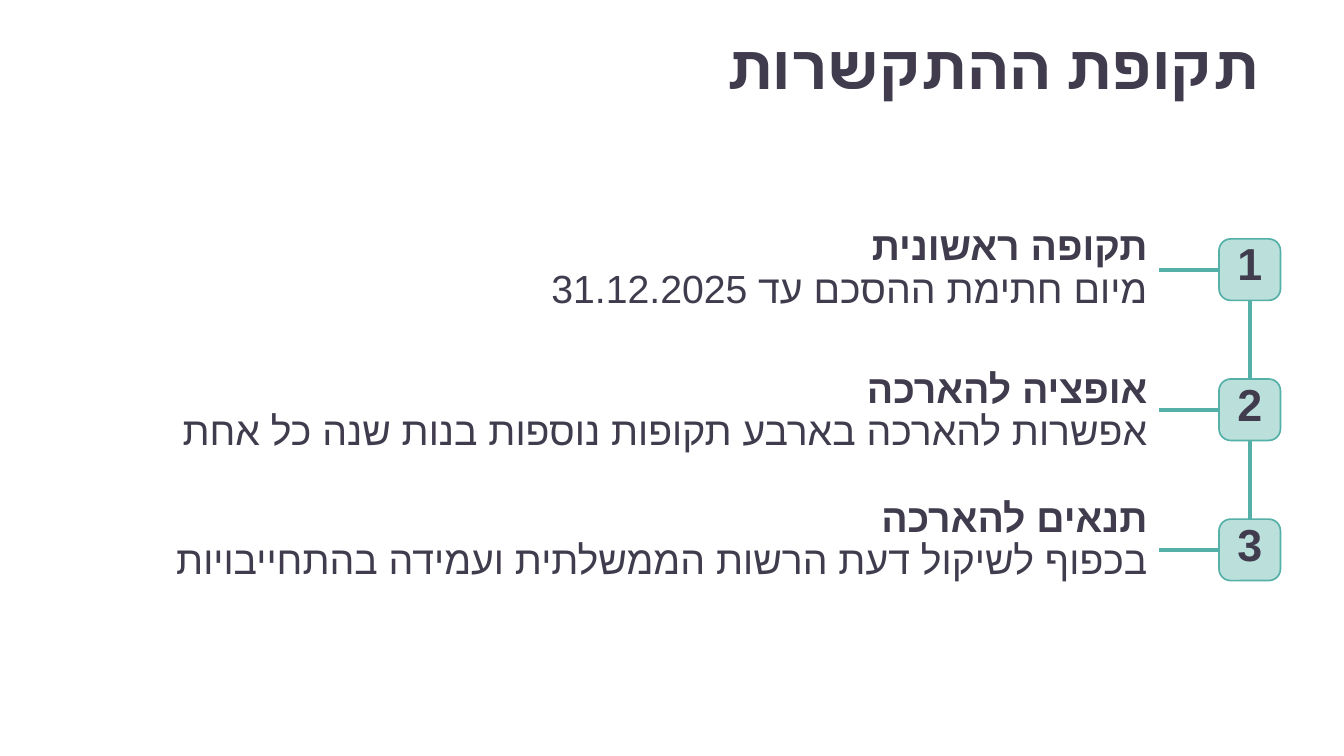
import pptx
import pptx.util
import pptx.dml.color
import pptx.enum.shapes
import pptx.enum.text
import pptx.oxml.ns
import lxml.etree

Inches = pptx.util.Inches
INK = "403C4E"
TEAL = "55B0A7"

BADGE_LEFT, BADGE_TOP = 12.09, 2.37
BADGE_SIZE, BADGE_PITCH = 0.61, 1.39
BRANCH_END = 11.5
TEXT_RIGHT, TEXT_WIDTH = 11.38, 10
DETAIL_OFFSET = 0.41

# Heading, its top, detail
STAGES = [
    ("תקופה ראשונית", 2.25, "מיום חתימת ההסכם עד 31.12.2025"),
    ("אופציה להארכה", 3.66, "אפשרות להארכה בארבע תקופות נוספות בנות שנה כל אחת"),
    ("תנאים להארכה", 4.94, "בכפוף לשיקול דעת הרשות הממשלתית ועמידה בהתחייבויות"),
]


def color(value):
    return pptx.dml.color.RGBColor.from_string(value)


def add_child(parent, tag, **attributes):
    return lxml.etree.SubElement(parent, pptx.oxml.ns.qn(tag), attributes)


def write_text(frame, text, size, spacing, font, bold, align):
    """Fill a frame with one right-to-left paragraph."""
    frame.text = text
    frame.word_wrap = True
    para = frame.paragraphs[0]
    para.alignment = align
    para.line_spacing = pptx.util.Pt(spacing)
    para._p.get_or_add_pPr().set("rtl", "1")
    span = para.runs[0]
    span.font.size = pptx.util.Pt(size)
    span.font.bold = bold
    span.font.color.rgb = color(INK)
    span.font.name = font
    # Hebrew letters take the complex-script typeface
    add_child(span.font._element, "a:cs", typeface=font)


def clear_margins(frame):
    frame.margin_left = frame.margin_right = 0
    frame.margin_top = frame.margin_bottom = 0


def add_title(page, text):
    title = page.shapes.title
    title.left, title.top = Inches(6.18), Inches(-0.1)
    title.width, title.height = Inches(6.41), Inches(1.45)
    title.text_frame.vertical_anchor = pptx.enum.text.MSO_ANCHOR.MIDDLE
    write_text(title.text_frame, text, 44, 55, "Calibri", True,
               pptx.enum.text.PP_ALIGN.RIGHT)


def add_label(page, text, top, spacing, bold):
    """Add a text box that ends at the common right edge."""
    box = page.shapes.add_textbox(Inches(TEXT_RIGHT - TEXT_WIDTH), Inches(top),
                                  Inches(TEXT_WIDTH), Inches(0.42))
    clear_margins(box.text_frame)
    write_text(box.text_frame, text, 28, spacing, "Arial", bold,
               pptx.enum.text.PP_ALIGN.RIGHT)


def add_badge(page, number):
    top = BADGE_TOP + (number - 1) * BADGE_PITCH
    badge = page.shapes.add_shape(
        pptx.enum.shapes.MSO_SHAPE.ROUNDED_RECTANGLE,
        Inches(BADGE_LEFT), Inches(top), Inches(BADGE_SIZE), Inches(BADGE_SIZE))
    badge.adjustments[0] = 0.19
    badge.shadow.inherit = False
    badge.fill.solid()
    badge.fill.fore_color.rgb = color(TEAL)
    fill_color = badge._element.spPr.find(".//" + pptx.oxml.ns.qn("a:srgbClr"))
    add_child(fill_color, "a:alpha", val="40000")
    badge.line.color.rgb = color(TEAL)
    badge.line.width = pptx.util.Pt(1.2)
    clear_margins(badge.text_frame)
    badge.text_frame.vertical_anchor = pptx.enum.text.MSO_ANCHOR.MIDDLE
    write_text(badge.text_frame, str(number), 32, 29, "Arial", True,
               pptx.enum.text.PP_ALIGN.CENTER)
    return badge


def add_line(page, x1, y1, x2, y2):
    line = page.shapes.add_connector(
        pptx.enum.shapes.MSO_CONNECTOR.STRAIGHT, x1, y1, x2, y2)
    line.line.color.rgb = color(TEAL)
    line.line.width = pptx.util.Pt(3)
    add_child(line._element.spPr, "a:effectLst")
    return line


def add_branch(page, badge):
    """Lead from the badge to its text."""
    middle = badge.top + badge.height // 2
    line = add_line(page, badge.left, middle, Inches(BRANCH_END), middle)
    line.begin_connect(badge, 1)


def add_link(page, upper, lower):
    """Join two badges, one above the other."""
    center = upper.left + upper.width // 2
    line = add_line(page, center, upper.top + upper.height, center, lower.top)
    line.begin_connect(upper, 2)
    line.end_connect(lower, 0)


def main():
    deck = pptx.Presentation()
    deck.slide_width, deck.slide_height = Inches(13.33), Inches(7.5)
    page = deck.slides.add_slide(deck.slide_layouts[5])
    add_title(page, "תקופת ההתקשרות")

    # Numbered stages with their texts
    badges = []
    for number, (heading, top, detail) in enumerate(STAGES, 1):
        add_label(page, heading, top, 30, True)
        add_label(page, detail, top + DETAIL_OFFSET, 31, False)
        badge = add_badge(page, number)
        add_branch(page, badge)
        badges.append(badge)

    # Vertical line through the stages
    for upper, lower in zip(badges, badges[1:]):
        add_link(page, upper, lower)

    deck.save("out.pptx")


if __name__ == "__main__":
    main()
